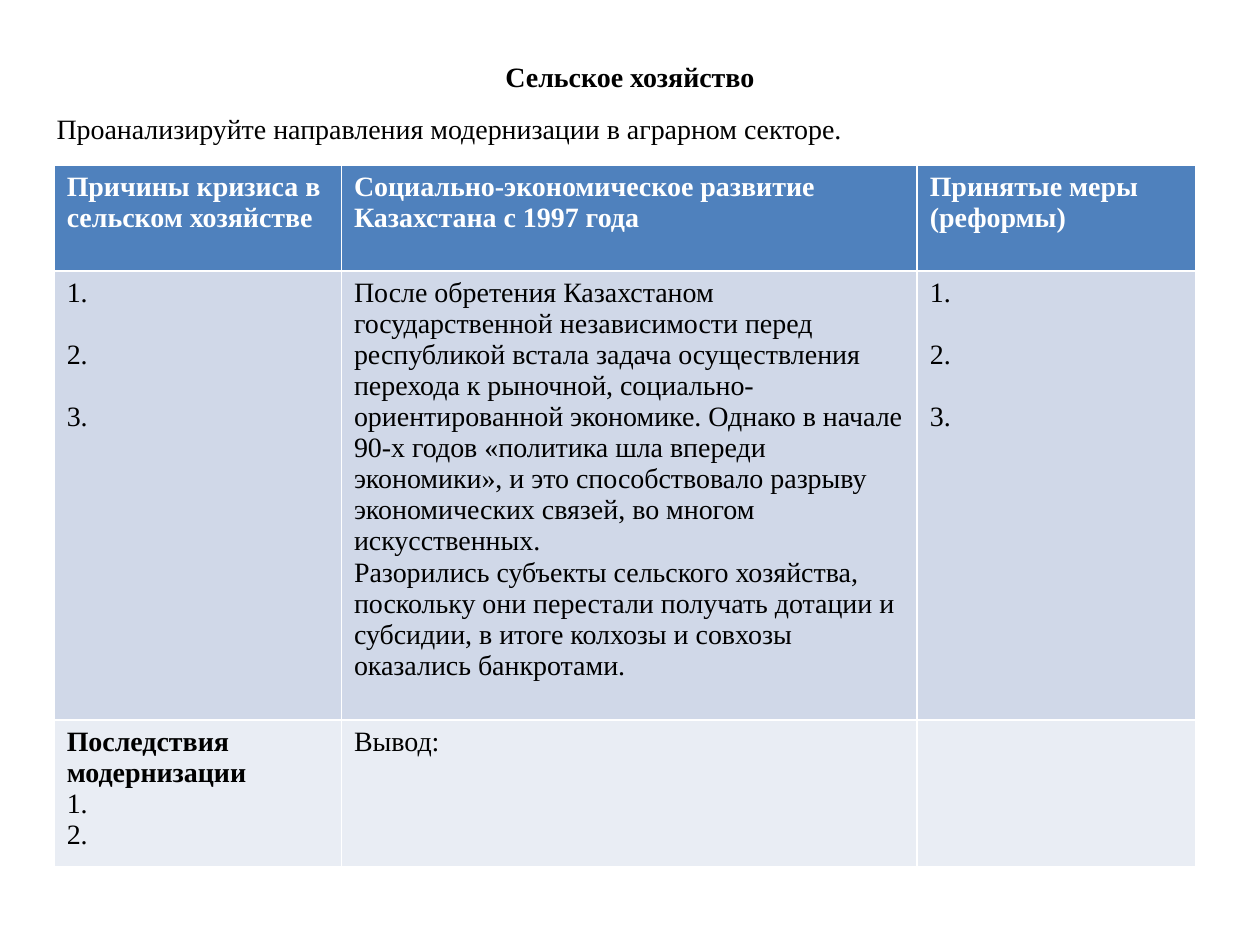
from pptx import Presentation
from pptx.dml.color import RGBColor
from pptx.enum import text
from pptx.util import Inches, Pt

BLACK = RGBColor(0x00, 0x00, 0x00)
WHITE = RGBColor(0xFF, 0xFF, 0xFF)
HEADER_BLUE = RGBColor(0x4F, 0x81, 0xBD)
BAND_DARK = RGBColor(0xD0, 0xD8, 0xE8)
BAND_LIGHT = RGBColor(0xE9, 0xED, 0xF4)

COLS, ROWS = 100, 75  # grid of the slide
LINE = 17.75          # height of one text line, in points


class Deck:
    """Holds the text style, the grid and the current slide."""

    FONT = {"name": "Times New Roman", "size": Pt(16), "bold": False}

    def __init__(self, width, height):
        self.prs = Presentation()
        self.prs.slide_width, self.prs.slide_height = width, height
        self.col, self.row = width / COLS, height / ROWS
        self.s = self.prs.slides.add_slide(self.prs.slide_layouts[5])

    def box(self, x, y, w, h):
        return (round(x * self.col), round(y * self.row),
                round(w * self.col), round(h * self.row))

    def add_lines(self, tf, lines, color=BLACK, bold_lines=0, **spacing):
        """One paragraph per line; the first bold_lines of them are bold."""
        for i, line in enumerate(lines):
            p = tf.paragraphs[0] if i == 0 else tf.add_paragraph()
            for name, value in spacing.items():
                setattr(p, name, value)
            r = p.add_run()
            r.text = line
            for name, value in {**self.FONT, "bold": i < bold_lines}.items():
                setattr(r.font, name, value)
            r.font.color.rgb = color

    def title(self, line, *area):
        sp = self.s.shapes.title
        sp.left, sp.top, sp.width, sp.height = self.box(*area)
        sp.text_frame.vertical_anchor = text.MSO_ANCHOR.MIDDLE
        self.add_lines(sp.text_frame, [line], bold_lines=1,
                       alignment=text.PP_ALIGN.CENTER)

    def body(self, line, *area):
        tf = self.s.shapes.add_textbox(*self.box(*area)).text_frame
        tf.word_wrap = True
        self.add_lines(tf, [line], space_before=Pt(3.2))

    def table(self, x, y, widths, heights, fills, cells):
        area = self.box(x, y, sum(widths), sum(heights))
        table = self.s.shapes.add_table(len(heights), len(widths), *area).table
        for column, w in zip(table.columns, widths):
            column.width = round(w * self.col)
        for row, h, fill, contents in zip(table.rows, heights, fills, cells):
            row.height = round(h * self.row)
            for cell, content in zip(row.cells, contents):
                cell.fill.solid()
                cell.fill.fore_color.rgb = fill
                self.add_lines(cell.text_frame, **content)


def heading(line):
    return {"lines": [line], "color": WHITE, "bold_lines": 1}


def main():
    deck = Deck(Inches(10), Inches(7.5))

    # Title and task
    deck.title("Сельское хозяйство", 5, 3, 90, 6.1)
    deck.body("Проанализируйте направления модернизации в аграрном секторе.",
              3.5, 8.4, 91.5, 58.6)

    # Worksheet table: header, causes and measures, consequences
    numbered = {"lines": ["1.", "2.", "3."], "space_after": Pt(LINE)}
    cells = [
        [heading("Причины кризиса в сельском хозяйстве"),
         heading("Социально-экономическое развитие Казахстана с 1997 года"),
         heading("Принятые меры (реформы)")],
        [numbered,
         {"lines": [
             "После обретения Казахстаном государственной независимости перед "
             "республикой встала задача осуществления перехода к рыночной, "
             "социально-ориентированной экономике. Однако в начале 90-х годов "
             "«политика шла впереди экономики», и это способствовало разрыву "
             "экономических связей, во многом искусственных.",
             "Разорились субъекты сельского хозяйства, поскольку они перестали "
             "получать дотации и субсидии, в итоге колхозы и совхозы оказались "
             "банкротами."]},
         numbered],
        [{"lines": ["Последствия модернизации", "1.", "2."], "bold_lines": 1},
         {"lines": ["Вывод:"]},
         {"lines": []}],
    ]
    deck.table(4.3, 13.1, widths=[22.8, 45.7, 22.1], heights=[8.4, 35.5, 10.8],
               fills=[HEADER_BLUE, BAND_DARK, BAND_LIGHT], cells=cells)

    deck.prs.save("out.pptx")


if __name__ == "__main__":
    main()
